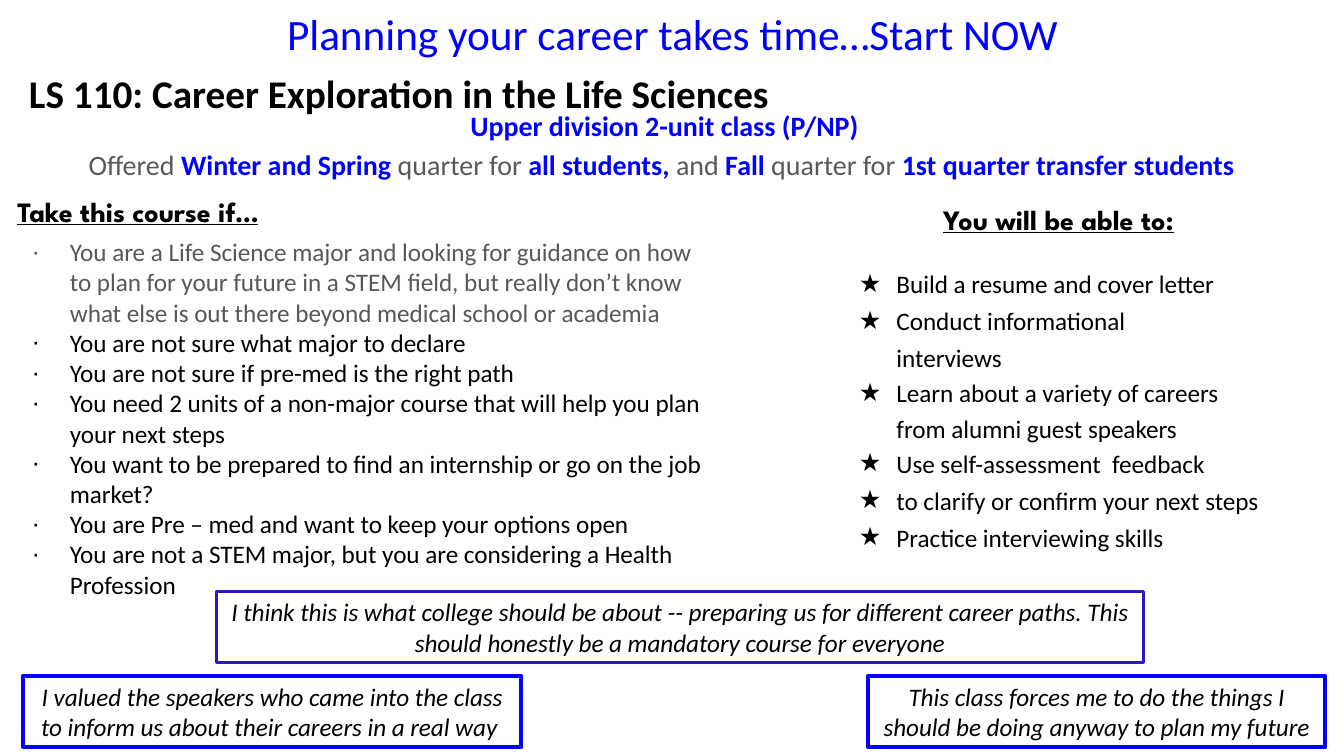
from pptx import Presentation
from pptx.dml.color import RGBColor
from pptx.enum.shapes import MSO_SHAPE
from pptx.enum.text import MSO_ANCHOR, MSO_AUTO_SIZE, PP_ALIGN
from pptx.oxml.ns import qn
from pptx.util import Inches, Pt
from lxml.etree import SubElement

BLACK = RGBColor(0x00, 0x00, 0x00)
BLUE = RGBColor(0x00, 0x00, 0xFF)
VIOLET = RGBColor(0x2B, 0x17, 0xC0)
GREY = RGBColor(0x57, 0x58, 0x5B)

CENTER = PP_ALIGN.CENTER
NO_INSET = (0, 0)
INSET = (0.07, 0.04)

BANNER = "Planning your career takes time…Start NOW"
TITLE = "LS 110: Career Exploration in the Life Sciences"
CLASS_TYPE = "Upper division 2-unit class (P/NP)"
# Plain and highlighted pieces alternate, starting with a plain one
OFFERED = ["Offered ", "Winter and Spring ", "quarter for ", "all students, ",
           "and ", "Fall", " quarter for", " 1st quarter transfer students "]

HEADINGS = [
    ("Take this course if…", (0.12, 1.45, 2.27, 0.25)),
    ("You will be able to:", (7.01, 1.51, 2.18, 0.25)),
]
# text, colour, line spacing, right margin
REASONS = [
    ("You are a Life Science major and looking for guidance on how to plan for "
     "your future in a STEM field, but really don’t know what else is out there "
     "beyond medical school or academia", GREY, 1.0, 0),
    ("You are not sure what major to declare", BLACK, 1.0, 0),
    ("You are not sure if pre-med is the right path", BLACK, 1.0, 0),
    ("You need 2 units of a non-major course that will help you plan your next "
     "steps", BLACK, 1.0, 0),
    ("You want to be prepared to find an internship or go on the job market? ",
     BLACK, 1.0, 0),
    ("You are Pre – med and want to keep your options open", BLACK, 1.0, 0),
    ("You are not a STEM major, but you are considering a Health Profession",
     BLACK, 1.0, 0),
]
OUTCOMES = [
    ("Build a resume and cover letter", BLACK, 1.18, 0),
    ("Conduct informational interviews", BLACK, 1.22, 0.8),
    ("Learn about a variety of careers from alumni guest speakers", BLACK, 1.17, 0.4),
    ("Use self-assessment  feedback", BLACK, 1.16, 0),
    ("to clarify or confirm your next steps", BLACK, 1.22, 0),
    ("Practice interviewing skills", BLACK, 1.22, 0),
]
# text, box, line colour, line width
QUOTES = [
    ("This class forces me to do the things I should be doing anyway to plan my "
     "future", (6.46, 5.03, 3.4, 0.53), BLUE, 2.25),
    ("I valued the speakers who came into the class to inform us about their "
     "careers in a real way ", (0.17, 5.03, 3.71, 0.53), BLUE, 2.25),
    ("I think this is what college should be about -- preparing us for different "
     "career paths. This should honestly be a mandatory course for everyone",
     (1.61, 4.4, 6.9, 0.53), VIOLET, 1.5),
]


def set_frame(sp, inset, anchor=MSO_ANCHOR.TOP):
    tf = sp.text_frame
    x, y = (Inches(v) for v in inset)
    values = dict(word_wrap=True, auto_size=MSO_AUTO_SIZE.NONE,
                  vertical_anchor=anchor, margin_left=x, margin_right=x,
                  margin_top=y, margin_bottom=y)
    for name, value in values.items():
        setattr(tf, name, value)
    return tf


def place(sp, box):
    sp.left, sp.top, sp.width, sp.height = (Inches(v) for v in box)


def add_text(box, inset=NO_INSET, anchor=MSO_ANCHOR.TOP):
    sp = slide.shapes.add_textbox(*(Inches(v) for v in box))
    return set_frame(sp, inset, anchor)


def add_run(p, text, size, color, font="Calibri", **style):
    r = p.add_run()
    r.text = text
    for name, value in dict(size=Pt(size), name=font, **style).items():
        setattr(r.font, name, value)
    r.font.color.rgb = color


def set_margins(p, left, right=0, indent=0):
    pPr = p._p.get_or_add_pPr()
    for name, value in dict(marL=left, marR=right, indent=indent).items():
        pPr.set(name, str(Inches(value)))
    return pPr


def set_bullet(pPr, char, color):
    clr = SubElement(pPr, qn("a:buClr"))
    SubElement(clr, qn("a:srgbClr"), val=str(color))
    SubElement(pPr, qn("a:buChar"), char=char)


def fill_list(sp, box, items, char, margin, inset):
    place(sp, box)
    tf = set_frame(sp, inset)
    for i, (text, color, spacing, right) in enumerate(items):
        p = tf.add_paragraph() if i else tf.paragraphs[0]
        p.space_before = Pt(0)
        p.line_spacing = spacing
        set_bullet(set_margins(p, margin, right, -0.28), char, color)
        add_run(p, text, 13.5, color)


prs = Presentation()
prs.slide_width = Inches(10)
prs.slide_height = prs.slide_width * 9 // 16
slide = prs.slides.add_slide(prs.slide_layouts[3])
title, reasons, outcomes = slide.placeholders

place(title, (0, 0.4, 5.93, 0.41))
p = set_frame(title, NO_INSET).paragraphs[0]
p.alignment, p.line_spacing = CENTER, 1.34
set_margins(p, 0.01)
add_run(p, TITLE, 21, BLACK, bold=True)

tf = add_text((0.17, 0.76, 9.55, 0.53))
class_line, offered_line = tf.paragraphs[0], tf.add_paragraph()
for p in (class_line, offered_line):
    p.alignment, p.line_spacing = CENTER, 1.18
add_run(class_line, CLASS_TYPE, 15, BLUE, bold=True)
for i, text in enumerate(OFFERED):
    strong = i % 2 == 1
    add_run(offered_line, text, 15, BLUE if strong else GREY, bold=strong)

for text, box in HEADINGS:
    p = add_text(box).paragraphs[0]
    set_margins(p, 0.01)
    add_run(p, text, 15, BLACK, "League Spartan", bold=True, underline=True)

fill_list(reasons, (0.17, 1.72, 5.15, 2.67), REASONS, "∙", 0.28, INSET)
fill_list(outcomes, (6.29, 1.96, 3.34, 1.99), OUTCOMES, "★", 0.38, NO_INSET)

p = add_text((0.55, -0.04, 8.9, 0.58), (0.07, 0.07), MSO_ANCHOR.MIDDLE).paragraphs[0]
p.alignment = CENTER
set_margins(p, 0.01)
add_run(p, BANNER, 23.2, BLUE)

for text, box, color, width in QUOTES:
    sp = slide.shapes.add_shape(MSO_SHAPE.RECTANGLE, *(Inches(v) for v in box))
    sp.shadow.inherit = False
    sp.fill.background()
    sp.line.color.rgb, sp.line.width = color, Pt(width)
    p = set_frame(sp, INSET).paragraphs[0]
    p.alignment = CENTER
    add_run(p, text, 13.5, BLACK, italic=True)

prs.save("out.pptx")
